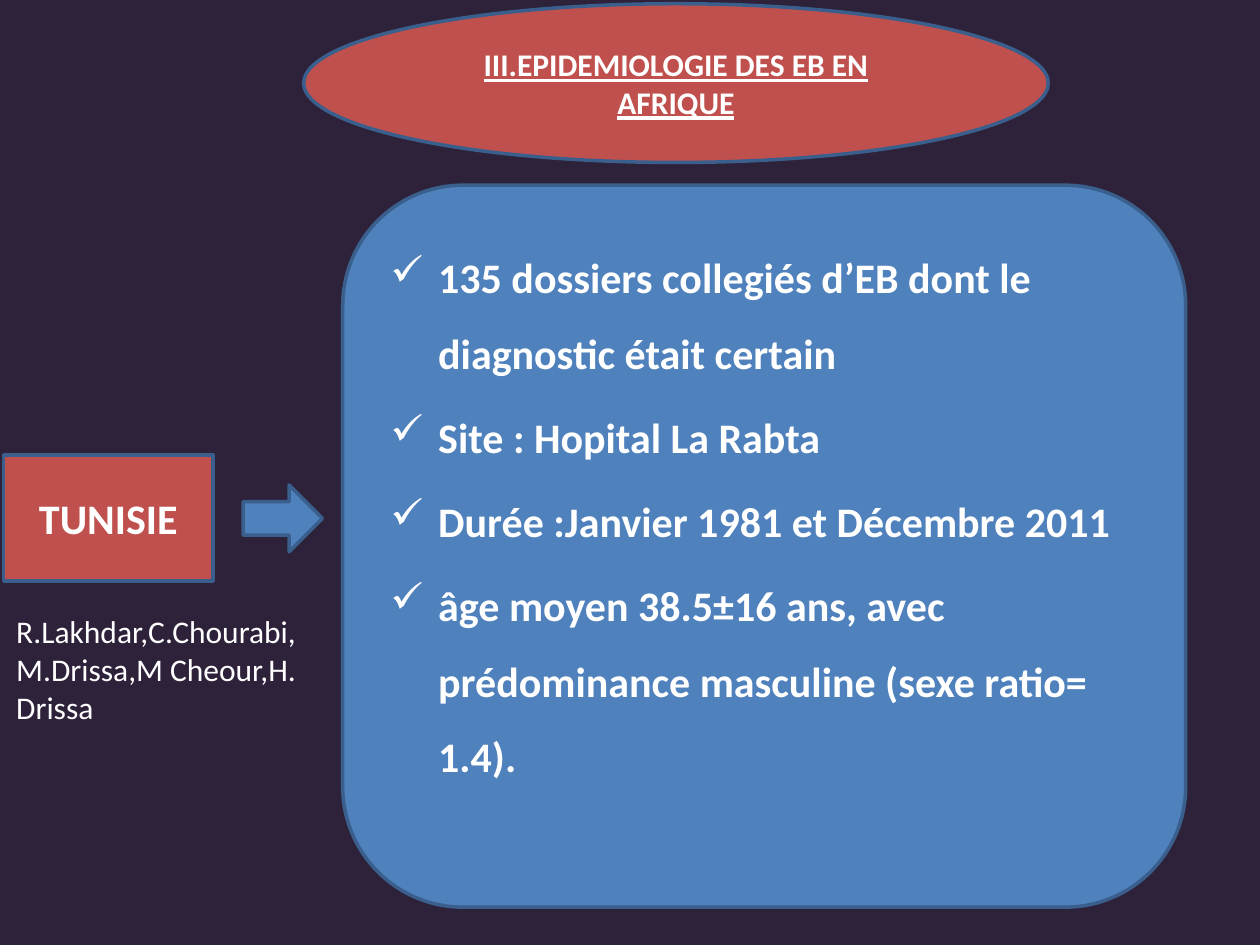
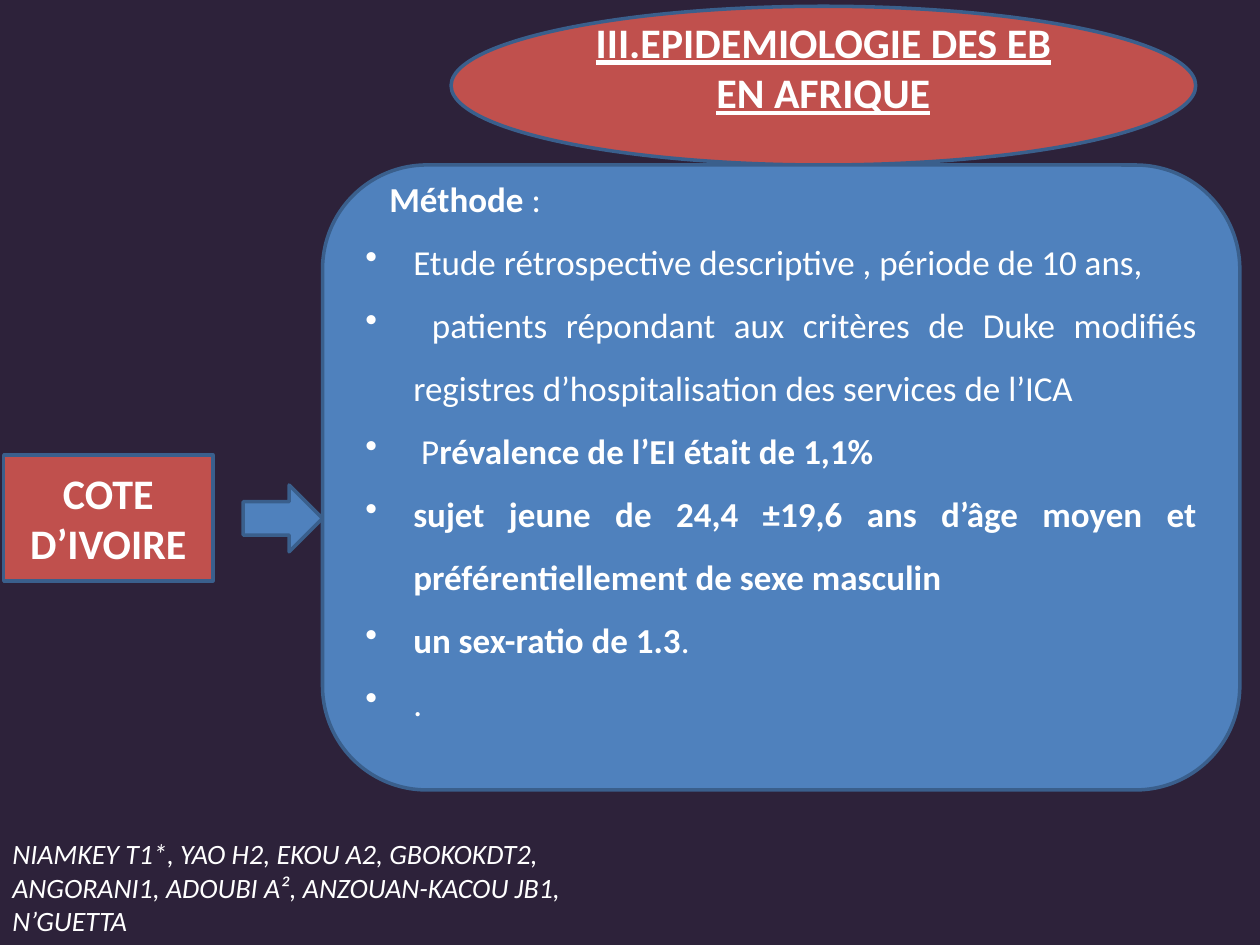
from lxml import etree
from pptx import Presentation
from pptx import util as u
from pptx.dml.color import RGBColor
from pptx.enum import shapes, text
from pptx.oxml import ns

NIGHT = RGBColor(0x2D, 0x22, 0x3A)
RED = RGBColor(0xC0, 0x50, 0x4D)
BLUE = RGBColor(0x4F, 0x81, 0xBD)
EDGE = RGBColor(0x3A, 0x5F, 0x8C)
WHITE = RGBColor(0xFF, 0xFF, 0xFF)
FONT = "Calibri"
TITLE = "III.EPIDEMIOLOGIE DES EB EN AFRIQUE"
HANGING = u.Inches(0.38)
CENTER, LEFT, JUSTIFY = text.PP_ALIGN.CENTER, text.PP_ALIGN.LEFT, text.PP_ALIGN.JUSTIFY


def add_block(slide, kind, place, fill, bottom_inset=0.05):
    block = slide.shapes.add_shape(kind, *[u.Inches(n) for n in place])
    block.shadow.inherit = False
    block.fill.solid()
    block.fill.fore_color.rgb = fill
    block.line.color.rgb = EDGE
    block.line.width = u.Pt(2)
    frame = block.text_frame
    frame.word_wrap = True
    frame.vertical_anchor = text.MSO_ANCHOR.MIDDLE
    frame.margin_bottom = u.Inches(bottom_inset)
    return frame


def add_runs(paragraph, runs, size, align, underline=False, italic=False):
    paragraph.alignment = align
    for words, bold in runs:
        run = paragraph.add_run()
        run.text = words
        run.font.name = FONT
        run.font.size = u.Pt(size)
        run.font.color.rgb = WHITE
        run.font.bold = bold
        run.font.underline = underline
        run.font.italic = italic


studies = [
    dict(
        country="TUNISIE",
        title_place=(2.41, 0.03, 5.91, 1.26), title_size=18, title_inset=0.05,
        panel_place=(2.72, 1.47, 6.69, 5.73), panel_inset=0.72,
        size=24, align=LEFT, before=4.8, bullet="✓", heading=None,
        findings=[
            [("135 dossiers collegiés d’EB dont le diagnostic était certain", True)],
            [("Site : Hopital La Rabta", True)],
            [("Durée :Janvier 1981 et Décembre 2011", True)],
            [("âge moyen 38.5±16 ans, avec prédominance masculine (sexe ratio= 1.4).", True)],
        ],
        authors="R.Lakhdar,C.Chourabi, M.Drissa,M Cheour,H. Drissa",
        authors_place=(0.03, 4.81, 2.68, 1.01), authors_size=18, authors_italic=False,
    ),
    dict(
        country="COTE D’IVOIRE",
        title_place=(3.58, 0.05, 5.91, 1.26), title_size=24, title_inset=0.35,
        panel_place=(2.56, 1.31, 7.28, 4.96), panel_inset=0.65,
        size=20, align=JUSTIFY, before=0, bullet="•",
        heading=[("Méthode", True), (" : ", False)],
        findings=[
            [("Etude rétrospective descriptive , période de 10 ans, ", False)],
            [(" patients répondant aux critères de Duke modifiés registres "
              "d’hospitalisation des services de l’ICA", False)],
            [(" P", False), ("révalence de l’EI était de 1,1% ", True)],
            [("sujet jeune de 24,4 ±19,6 ans d’âge moyen et préférentiellement "
              "de sexe masculin ", True)],
            [("un sex-ratio de 1.3", True), (".", False)],
            [(". ", False)],
        ],
        authors="NIAMKEY T1*, YAO H2, EKOU A2, GBOKOKDT2, ANGORANI1, ADOUBI A², "
                "ANZOUAN-KACOU JB1, N’GUETTA",
        authors_place=(0, 6.59, 5, 0.91), authors_size=16, authors_italic=True,
    ),
]

deck = Presentation()
deck.slide_width = u.Inches(10)
deck.slide_height = u.Inches(7.5)

for study in studies:
    slide = deck.slides.add_slide(deck.slide_layouts[6])
    slide.background.fill.solid()
    slide.background.fill.fore_color.rgb = NIGHT

    title = add_block(slide, shapes.MSO_SHAPE.OVAL, study["title_place"], RED, study["title_inset"])
    add_runs(title.paragraphs[0], [(TITLE, True)], study["title_size"], CENTER, underline=True)

    panel = add_block(slide, shapes.MSO_SHAPE.ROUNDED_RECTANGLE, study["panel_place"], BLUE,
                      study["panel_inset"])
    entries = [(runs, True) for runs in study["findings"]]
    if study["heading"]:
        entries.insert(0, (study["heading"], False))
    for index, (runs, bulleted) in enumerate(entries):
        finding = panel.add_paragraph() if index else panel.paragraphs[0]
        add_runs(finding, runs, study["size"], study["align"])
        finding.line_spacing = 1.5
        finding.space_before = u.Pt(study["before"])
        properties = finding._p.get_or_add_pPr()
        if bulleted:
            properties.set("marL", str(HANGING))
            properties.set("indent", str(-HANGING))
            etree.SubElement(properties, ns.qn("a:buChar")).set("char", study["bullet"])
        else:
            properties.set("marL", str(u.Inches(0.19)))

    country = add_block(slide, shapes.MSO_SHAPE.RECTANGLE, (0.03, 3.61, 1.66, 1), RED)
    add_runs(country.paragraphs[0], [(study["country"], True)], 24, CENTER)

    add_block(slide, shapes.MSO_SHAPE.RIGHT_ARROW, (1.93, 3.85, 0.63, 0.53), BLUE)

    authors = slide.shapes.add_textbox(*[u.Inches(n) for n in study["authors_place"]]).text_frame
    authors.word_wrap = True
    authors.auto_size = text.MSO_AUTO_SIZE.SHAPE_TO_FIT_TEXT
    add_runs(authors.paragraphs[0], [(study["authors"], False)], study["authors_size"], LEFT,
             italic=study["authors_italic"])

deck.save("out.pptx")
